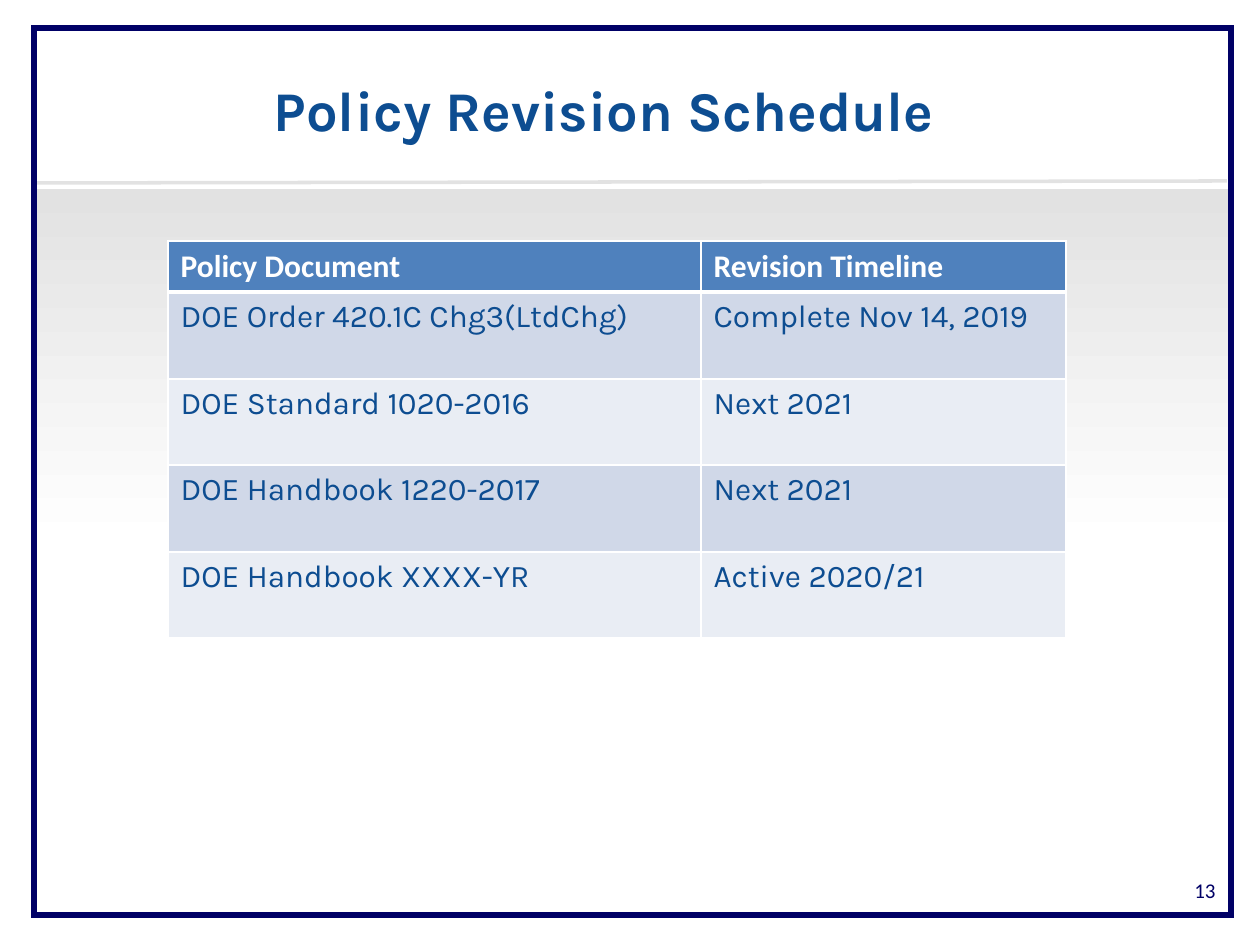
import pptx
import pptx.dml.color
import pptx.enum.shapes
import pptx.enum.text
import pptx.oxml
import pptx.oxml.ns
import pptx.util
from lxml import etree

PX = 914400 // 126
NAVY = "000066"
BLUE = "0D4D91"
GREY = "E2E2E2"
WHITE = "FFFFFF"
HEADER_FILL = "4F81BD"
BAND_FILLS = ["D0D8E8", "E9EDF4"]
ALIGN = pptx.enum.text.PP_ALIGN
ANCHOR = pptx.enum.text.MSO_ANCHOR


def colour(value):
    return pptx.dml.color.RGBColor.from_string(value)


def px(*lengths):
    return [pptx.util.Emu(length * PX) for length in lengths]


def write(frame, text, size=18, font="Karla", hue=BLUE, bold=False,
          align=ALIGN.LEFT, spacing=None):
    para = frame.paragraphs[0]
    para.alignment = align
    if spacing:
        para.line_spacing = spacing
    span = para.add_run()
    span.text = text
    span.font.size = pptx.util.Pt(size)
    span.font.name = font
    span.font.bold = bold
    span.font.color.rgb = colour(hue)


def add_border(cell, side, points):
    properties = cell._tc.get_or_add_tcPr()
    line = etree.SubElement(properties, pptx.oxml.ns.qn(f"a:{side}"),
                            w=str(pptx.util.Pt(points)))
    fill = etree.SubElement(line, pptx.oxml.ns.qn("a:solidFill"))
    etree.SubElement(fill, pptx.oxml.ns.qn("a:srgbClr"), val=WHITE)


class SlideBuilder:
    def __init__(self, page):
        self.page = page

    def rectangle(self, *bounds):
        box = self.page.shapes.add_shape(
            pptx.enum.shapes.MSO_SHAPE.RECTANGLE, *px(*bounds))
        box.shadow.inherit = False
        return box

    def gradient_band(self, *bounds):
        band = self.rectangle(*bounds)
        band.line.fill.background()
        band.fill.gradient()
        band.fill.gradient_angle = 90
        for stop, hue in zip(band.fill.gradient_stops, [WHITE, GREY]):
            stop.color.rgb = colour(hue)

    def frame(self, *bounds, hue, width):
        border = self.rectangle(*bounds)
        border.fill.background()
        border.line.color.rgb = colour(hue)
        border.line.width = pptx.util.Pt(width)
        outline = border.line._get_or_add_ln()
        etree.SubElement(outline, pptx.oxml.ns.qn("a:miter"), lim="800000")

    def line(self, *ends, hue, width):
        rule = self.page.shapes.add_connector(
            pptx.enum.shapes.MSO_CONNECTOR.STRAIGHT, *px(*ends))
        rule.line.color.rgb = colour(hue)
        rule.line.width = pptx.util.Pt(width)
        etree.SubElement(rule._element.spPr, pptx.oxml.ns.qn("a:effectLst"))

    def title(self, text, *bounds, **style):
        box = self.page.shapes.title
        box.left, box.top, box.width, box.height = px(*bounds)
        box.text_frame.vertical_anchor = ANCHOR.MIDDLE
        write(box.text_frame, text, **style)

    def text(self, text, *bounds, anchor=ANCHOR.TOP, **style):
        box = self.page.shapes.add_textbox(*px(*bounds))
        box.text_frame.word_wrap = True
        box.text_frame.vertical_anchor = anchor
        write(box.text_frame, text, **style)

    def table(self, rows, left, top, widths, heights):
        table = self.page.shapes.add_table(
            len(rows), len(widths),
            *px(left, top, sum(widths), sum(heights))).table
        for column, width in zip(table.columns, px(*widths)):
            column.width = width
        for row, height in zip(table.rows, px(*heights)):
            row.height = height
        for index, texts in enumerate(rows):
            header = index == 0
            borders = {"lnL": 1, "lnR": 1, "lnT": 3 if index == 1 else 1,
                       "lnB": 3 if header else 1}
            fill = HEADER_FILL if header else BAND_FILLS[(index - 1) % 2]
            style = dict(font="Calibri", hue=WHITE, bold=True) if header else {}
            for cell, text in zip(table.rows[index].cells, texts):
                for side, points in borders.items():
                    add_border(cell, side, points)
                cell.fill.solid()
                cell.fill.fore_color.rgb = colour(fill)
                write(cell.text_frame, text, **style)


def main():
    deck = pptx.Presentation()
    deck.slide_width, deck.slide_height = px(1260, 945)
    builder = SlideBuilder(deck.slides.add_slide(deck.slide_layouts[5]))
    builder.gradient_band(37, 189, 1191, 357)
    builder.line(35, 183, 1227, 181, hue=GREY, width=2)
    builder.frame(34, 28, 1197, 887, hue=NAVY, width=3.25)
    builder.title("Policy Revision Schedule", 221, 42, 766, 142,
                  size=32, bold=True, align=ALIGN.CENTER, spacing=0.9)
    schedule = [
        ("Policy Document", "Revision Timeline"),
        ("DOE Order 420.1C Chg3(LtdChg)", "Complete Nov 14, 2019"),
        ("DOE Standard 1020-2016", "Next 2021"),
        ("DOE Handbook 1220-2017", "Next 2021"),
        ("DOE Handbook XXXX-YR", "Active 2020/21"),
    ]
    builder.table(schedule, 168, 241, [533, 365], [51, 87, 86, 87, 86])
    builder.text("13", 1165, 865, 63, 51, anchor=ANCHOR.MIDDLE,
                 size=12, font="Calibri", hue=NAVY, align=ALIGN.RIGHT)
    deck.save("out.pptx")


if __name__ == "__main__":
    main()
